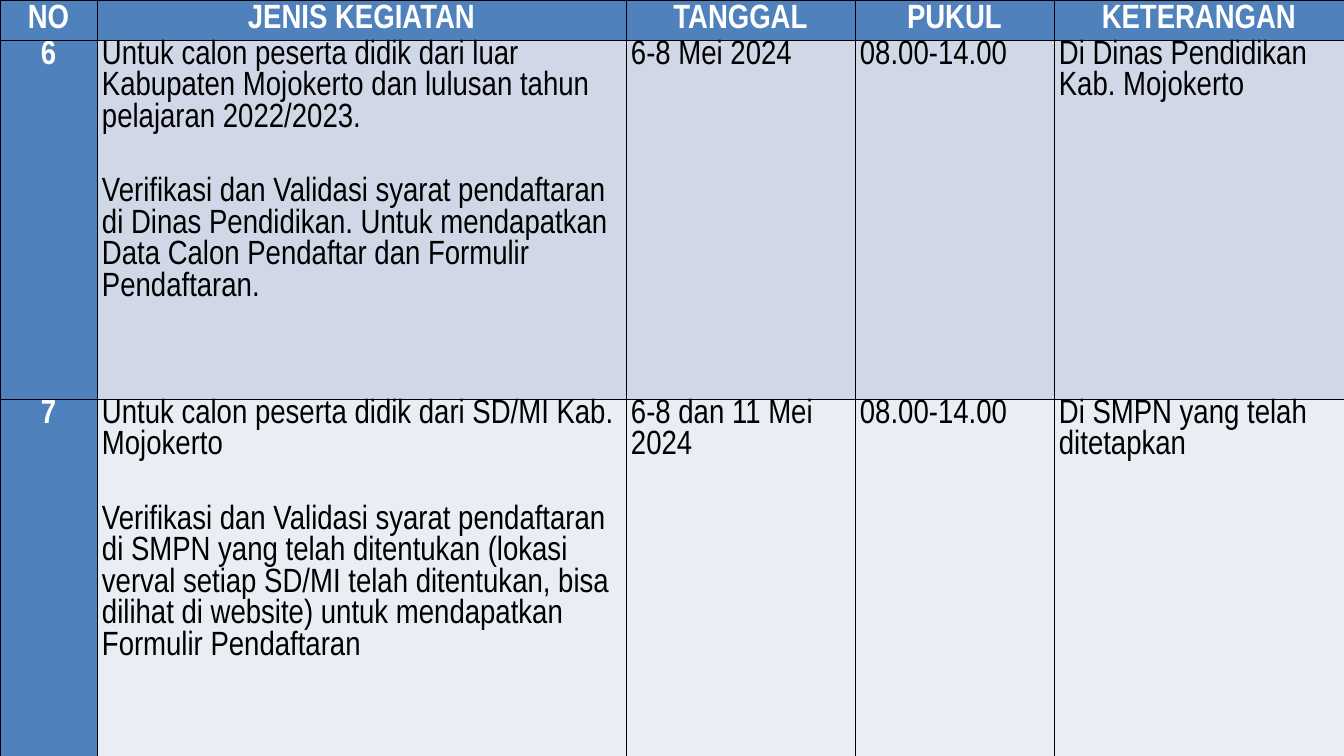
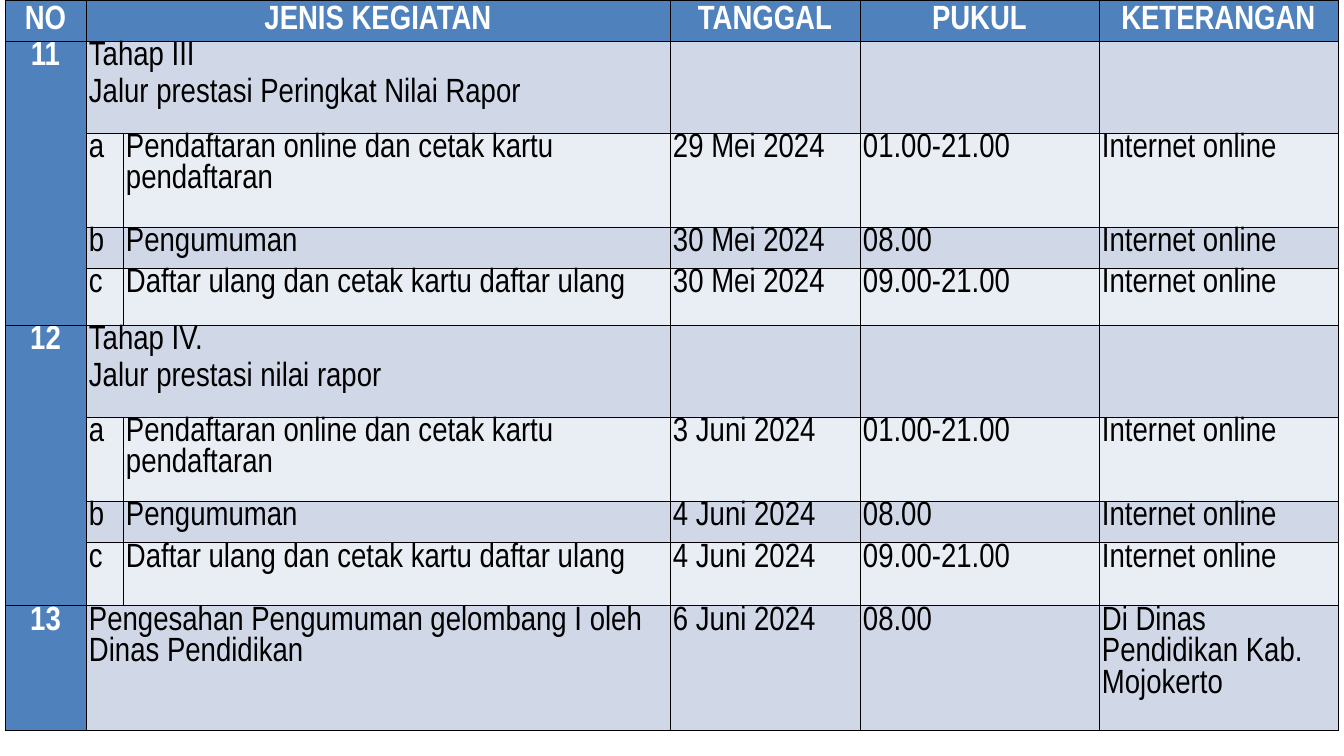
import pptx
import pptx.util
import pptx.dml.color
import pptx.enum.text
import pptx.oxml
import pptx.oxml.ns

# Content: None joins a cell to the one on its left, or above in the first column
ONLINE = "Internet online"
OFFICE = "Di Dinas Pendidikan Kab. Mojokerto"
HOURS = "08.00-14.00"
STEPS = [
    ("a", "Pendaftaran online dan cetak kartu pendaftaran", "01.00-21.00"),
    ("b", "Pengumuman", "08.00"),
    ("c", "Daftar ulang dan cetak kartu daftar ulang", "09.00-21.00"),
]


def stage(num, title, dates):
    """Heading row of a stage, then its steps."""
    rows = [(num, title, None, "", "", "")]
    for (mark, step, time), date in zip(STEPS, dates):
        rows.append((None, mark, step, date, time, ONLINE))
    return rows


TABLES = [
    {
        "left": 0, "inset": 5, "gap": 43,
        "cols": [97, 529, 229, 199, 290],
        "rows": [40, 359, 359],
        "cells": [
            ("NO", "JENIS KEGIATAN", "TANGGAL", "PUKUL", "KETERANGAN"),
            ("6", ["Untuk calon peserta didik dari luar Kabupaten Mojokerto "
                   "dan lulusan tahun pelajaran 2022/2023.",
                   "Verifikasi dan Validasi syarat pendaftaran di Dinas "
                   "Pendidikan. Untuk mendapatkan Data Calon Pendaftar dan "
                   "Formulir Pendaftaran."],
             "6-8 Mei 2024", HOURS, OFFICE),
            ("7", ["Untuk calon peserta didik dari SD/MI Kab. Mojokerto",
                   "Verifikasi dan Validasi syarat pendaftaran di SMPN yang "
                   "telah ditentukan (lokasi verval setiap SD/MI telah "
                   "ditentukan, bisa dilihat di website) untuk mendapatkan "
                   "Formulir Pendaftaran"],
             "6-8 dan 11 Mei 2024", HOURS, "Di SMPN yang telah ditetapkan"),
        ],
    },
    {
        "left": 5, "inset": 3, "gap": 3,
        "cols": [81, 37, 547, 190, 239, 239],
        "rows": [41, 92, 94, 41, 57, 92, 84, 42, 63, 125],
        "cells": [
            ("NO", "JENIS KEGIATAN", None, "TANGGAL", "PUKUL", "KETERANGAN"),
            *stage("11", ["Tahap III", "Jalur prestasi Peringkat Nilai Rapor"],
                   ["29 Mei 2024", "30 Mei 2024", "30 Mei 2024"]),
            *stage("12", ["Tahap IV.", "Jalur prestasi nilai rapor"],
                   ["3 Juni 2024", "4 Juni 2024", "4 Juni 2024"]),
            ("13", "Pengesahan Pengumuman gelombang I oleh Dinas Pendidikan",
             None, "6 Juni 2024", "08.00", OFFICE),
        ],
    },
]

# Theme
THEME = {
    "font": "Arial Narrow", "size": 36, "space": 3, "line": 1.0,
    "head": "4F81BD", "bands": ["E9EDF4", "D0D8E8"],
    "light": "FFFFFF", "dark": "000000", "rule": 1,
}
SCALE = 914400 / 67.2
ALIGN = pptx.enum.text.PP_ALIGN
ANCHOR = pptx.enum.text.MSO_ANCHOR


def px(num):
    return pptx.util.Emu(round(num * SCALE))


def rgb(code):
    return pptx.dml.color.RGBColor.from_string(code)


def put(item, **vals):
    for name, val in vals.items():
        setattr(item, name, val)


def edge(cell):
    """Rule all four sides of a cell."""
    props = cell._tc.get_or_add_tcPr()
    width = pptx.util.Pt(THEME["rule"])
    for spot, side in enumerate("LRTB"):
        line = pptx.oxml.parse_xml(
            f'<a:ln{side} {pptx.oxml.ns.nsdecls("a")} w="{width}"><a:solidFill>'
            f'<a:srgbClr val="{THEME["dark"]}"/></a:solidFill></a:ln{side}>')
        props.insert(spot, line)


def paint(cell, row, col, inset):
    """Fill, margins and rules by place in the table."""
    cell.fill.solid()
    key = row == 0 or col == 0
    cell.fill.fore_color.rgb = rgb(THEME["head"] if key else THEME["bands"][row % 2])
    put(cell, margin_left=px(inset), margin_right=px(inset),
        margin_top=0, margin_bottom=0,
        vertical_anchor=ANCHOR.TOP if row else ANCHOR.MIDDLE)
    edge(cell)


def write(cell, text, key, gap):
    """Put in the paragraphs; gap is the space above each after the first."""
    lines = [text] if isinstance(text, str) else text
    frame = cell.text_frame
    for num, words in enumerate(lines):
        para = frame.add_paragraph() if num else frame.paragraphs[0]
        put(para, alignment=ALIGN.CENTER if key else ALIGN.LEFT,
            line_spacing=THEME["line"],
            space_before=pptx.util.Pt(gap if num else THEME["space"]),
            space_after=pptx.util.Pt(THEME["space"]))
        run = para.add_run()
        run.text = words
        put(run.font, name=THEME["font"], size=pptx.util.Pt(THEME["size"]), bold=key)
        run.font.color.rgb = rgb(THEME["light"] if key else THEME["dark"])


def build(slide, data):
    cols, rows, cells = data["cols"], data["rows"], data["cells"]
    grid = slide.shapes.add_table(
        len(rows), len(cols), px(data["left"]), 0, px(sum(cols)), px(sum(rows))).table
    for part, size in zip(grid.columns, cols):
        part.width = px(size)
    for part, size in zip(grid.rows, rows):
        part.height = px(size)

    # Cells
    for row, line in enumerate(cells):
        for col, text in enumerate(line):
            cell = grid.cell(row, col)
            paint(cell, row, col, data["inset"])
            if text:
                write(cell, text, row == 0 or col == 0, data["gap"])

    # Joined cells
    for row, line in enumerate(cells):
        for col, text in enumerate(line):
            if col and text is None:
                grid.cell(row, col - 1).merge(grid.cell(row, col))
        if line[0] is not None:
            last = row
            while last + 1 < len(cells) and cells[last + 1][0] is None:
                last += 1
            if last > row:
                grid.cell(row, 0).merge(grid.cell(last, 0))


def main():
    deck = pptx.Presentation()
    put(deck, slide_width=px(1344), slide_height=px(756))
    for data in TABLES:
        build(deck.slides.add_slide(deck.slide_layouts[6]), data)
    deck.save("out.pptx")


if __name__ == "__main__":
    main()
